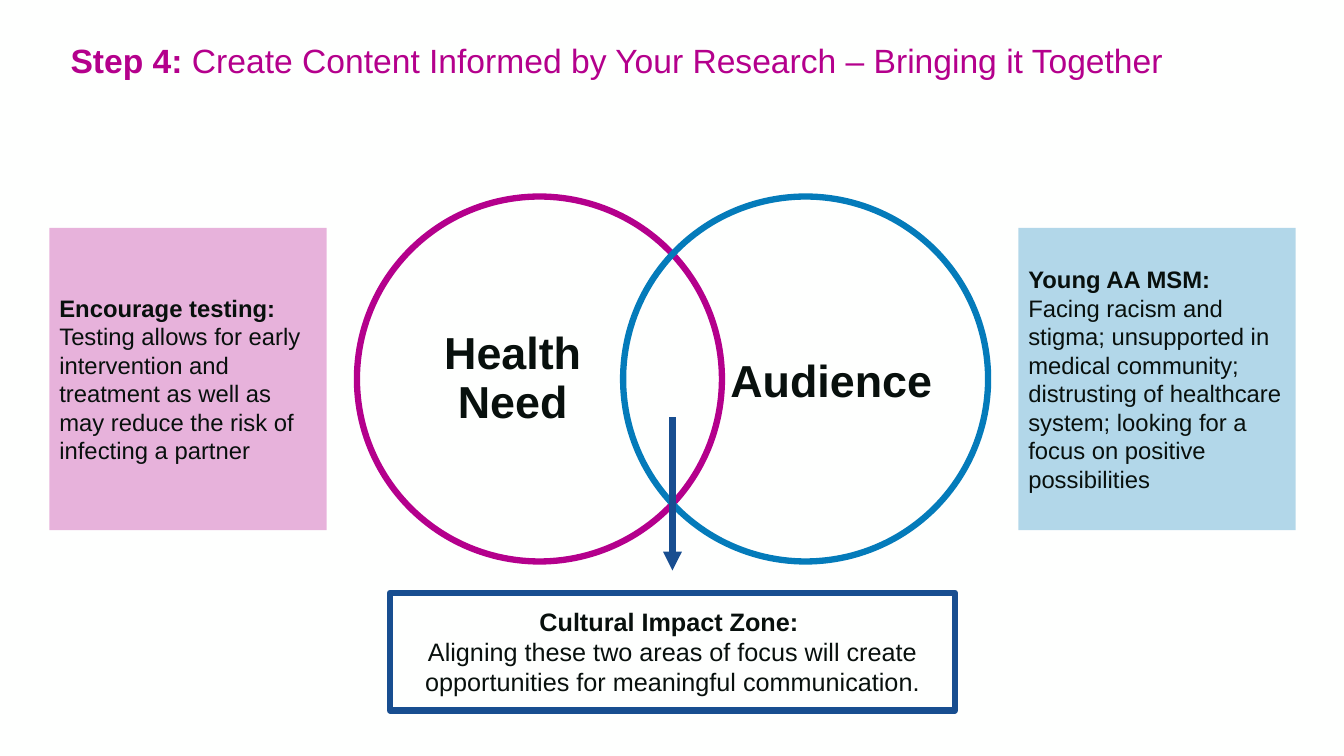
from typing import NamedTuple

from pptx import Presentation
from pptx.dml.color import RGBColor
from pptx.enum.shapes import MSO_CONNECTOR as Link, MSO_SHAPE as Shape
from pptx.enum.text import MSO_ANCHOR as Anchor, MSO_AUTO_SIZE as Fit, PP_ALIGN as Align
from pptx.oxml.ns import qn
from pptx.oxml.xmlchemy import OxmlElement as Node
from pptx.util import Inches, Pt

PAPER = RGBColor(0xFE, 0xFF, 0xFE)
INK = RGBColor(0x08, 0x10, 0x0D)
PINK = RGBColor(0xB4, 0x00, 0x8C)
BLUE = RGBColor(0x04, 0x7B, 0xBA)
NAVY = RGBColor(0x18, 0x4E, 0x90)
FONT = "Arial"
STROKE = Pt(4.5)


class Ring(NamedTuple):
    left: float
    label: str
    text_left: float
    color: RGBColor
    spacing: float


class Card(NamedTuple):
    left: float
    head: str
    body: str
    color: RGBColor


RINGS = [
    Ring(3.54, "Health Need", 4.04, PINK, 0.9),
    Ring(6.18, "Audience", 7.2, BLUE, 1.0),
]
CARDS = [
    Card(0.49, "Encourage testing: ",
         "Testing allows for early intervention and treatment as well as "
         "may reduce the risk of infecting a partner", PINK),
    Card(10.1, "Young AA MSM: ",
         "Facing racism and stigma; unsupported in medical community; "
         "distrusting of healthcare system; looking for a focus on positive "
         "possibilities", BLUE),
]


def write(shape, *paras, size: float, color: RGBColor = INK,
          align=Align.LEFT, spacing: float = 1.0, inset: bool = True) -> None:
    """Each paragraph is a list of (text, bold) runs."""
    frame = shape.text_frame
    frame.word_wrap = True
    frame.auto_size = Fit.NONE
    frame.vertical_anchor = Anchor.MIDDLE
    if not inset:
        frame.margin_left = frame.margin_right = 0
        frame.margin_top = frame.margin_bottom = 0
    for i, runs in enumerate(paras):
        para = frame.add_paragraph() if i else frame.paragraphs[0]
        para.alignment = align
        para.line_spacing = spacing
        for text, bold in runs:
            run = para.add_run()
            run.text = text
            font = run.font
            font.name, font.size, font.bold = FONT, Pt(size), bold
            font.color.rgb = color


def place(shapes, kind, left: float, top: float, width: float, height: float):
    shape = shapes.add_shape(kind, Inches(left), Inches(top),
                             Inches(width), Inches(height))
    shape.shadow.inherit = False
    return shape


def outline(shapes, kind, color: RGBColor, *box: float):
    shape = place(shapes, kind, *box)
    shape.fill.background()
    shape.line.color.rgb = color
    shape.line.width = STROKE
    return shape


def draw_ring(shapes, ring: Ring) -> None:
    outline(shapes, Shape.OVAL, ring.color, ring.left, 1.95, 3.62, 3.62)
    label = shapes.add_textbox(Inches(ring.text_left), Inches(2.38),
                               Inches(2.09), Inches(2.77))
    write(label, [(ring.label, True)], size=32, align=Align.CENTER,
          spacing=ring.spacing, inset=False)


def draw_card(shapes, card: Card) -> None:
    shape = place(shapes, Shape.RECTANGLE, card.left, 2.26, 2.75, 3)
    shape.fill.solid()
    shape.fill.fore_color.rgb = card.color
    shape.line.fill.background()
    alpha = Node("a:alpha")
    alpha.set("val", "30000")
    shape.element.spPr.find(qn("a:solidFill"))[0].append(alpha)
    write(shape, [(card.head, True), (card.body, False)], size=17)


def draw_arrow(shapes, x: float, top: float, end: float) -> None:
    arrow = shapes.add_connector(Link.STRAIGHT, Inches(x), Inches(top),
                                 Inches(x), Inches(end))
    arrow.line.color.rgb = NAVY
    arrow.line.width = STROKE
    tip = Node("a:tailEnd")
    tip.set("type", "triangle")
    props = arrow.element.spPr
    props.find(qn("a:ln")).append(tip)
    props.append(Node("a:effectLst"))


def main() -> None:
    deck = Presentation()
    deck.slide_width, deck.slide_height = Inches(13.33), Inches(7.5)
    slide = deck.slides.add_slide(deck.slide_layouts[5])
    slide.background.fill.solid()
    slide.background.fill.fore_color.rgb = PAPER
    shapes = slide.shapes

    # Title
    title = shapes.title
    title.left, title.top = Inches(0.6), Inches(-0.1)
    title.width, title.height = Inches(12.01), Inches(1.45)
    write(title, [("Step 4: ", True),
                  ("Create Content Informed by Your Research – "
                   "Bringing it Together", False)],
          size=24, color=PINK, spacing=0.9)

    # Overlapping rings
    venn = shapes.add_group_shape()
    for ring in RINGS:
        draw_ring(venn.shapes, ring)

    # Impact zone and the arrow to it
    zone = outline(shapes, Shape.RECTANGLE, NAVY, 3.87, 5.88, 5.6, 1.17)
    write(zone, [("Cultural Impact Zone: ", True)],
          [("Aligning these two areas of focus will create "
            "opportunities for meaningful communication.", False)],
          size=18, align=Align.CENTER)
    draw_arrow(shapes, 6.67, 4.14, 5.66)

    # Side cards
    for card in CARDS:
        draw_card(shapes, card)

    deck.save("out.pptx")


if __name__ == "__main__":
    main()
